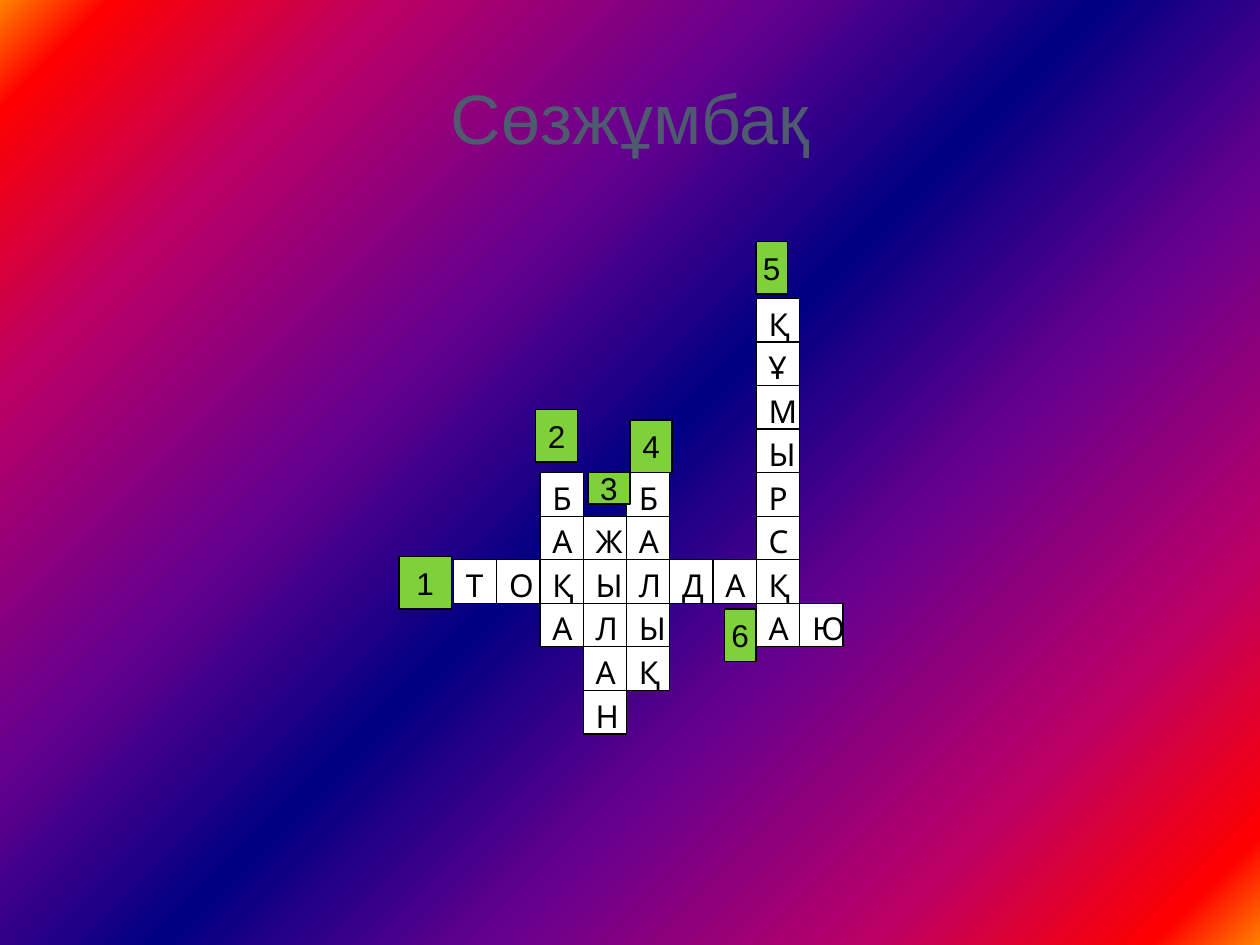
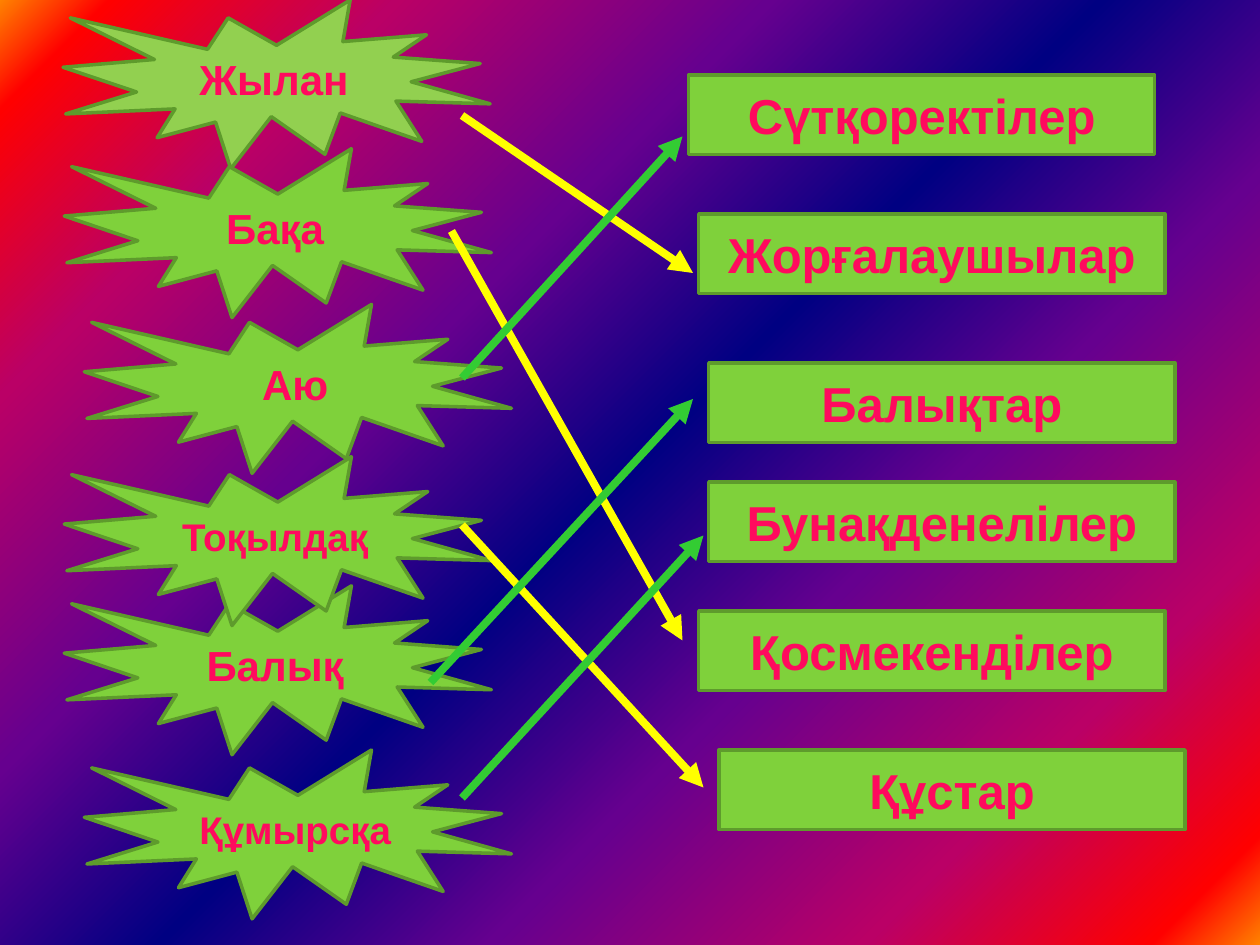
"""Build two slides about animals: a crossword and a matching exercise."""
from dataclasses import dataclass

from lxml.etree import SubElement
from pptx import Presentation
from pptx.dml.color import RGBColor
from pptx.enum.shapes import MSO_CONNECTOR, MSO_SHAPE
from pptx.enum.text import MSO_ANCHOR, PP_ALIGN
from pptx.oxml.ns import qn
from pptx.util import Pt


@dataclass(frozen=True)
class Theme:
    """Colours, fonts and type sizes of the presentation."""

    font: str = "Arial"
    cell_font: str = "Cabin"
    title: str = "4E5B6F"
    black: str = "000000"
    white: str = "FFFFFF"
    green: str = "7FD13B"
    light_green: str = "92D050"
    dark_green: str = "5E9B2C"
    yellow: str = "FFFF00"
    arrow_green: str = "33CC33"
    title_size: int = 40
    group_size: int = 28
    animal_size: int = 24
    long_animal_size: int = 22
    cell_size: int = 18
    thin: float = 0.75
    outline: float = 2
    arrow: float = 4.5
    rainbow: tuple = (
        (0, "FF8200"), (5, "FF0000"), (18, "BA0066"), (35, "66008F"), (50, "000082"),
        (65, "66008F"), (82, "BA0066"), (95, "FF0000"), (100, "FF8200"),
    )
    pink: tuple = ((0, "FF89AA"), (75, "FF0A5E"), (100, "BD0059"))


THEME = Theme()
CENTERED = {"vertical_anchor": MSO_ANCHOR.MIDDLE, "word_wrap": True}
UNWRAPPED = {"vertical_anchor": MSO_ANCHOR.MIDDLE, "word_wrap": False}
TOP = {"vertical_anchor": MSO_ANCHOR.TOP, "word_wrap": True}

TITLE_ONLY, BLANK = 5, 6
GRID_LEFT, GRID_TOP = 259.2, 170.6
CELL_WIDTH, CELL_HEIGHT = 24.72, 24.88
WORDS = [
    ("ТОҚЫЛДАҚ", 0, 6, "across"),
    ("БАҚА", 2, 4, "down"),
    ("ЖЫЛАН", 3, 5, "down"),
    ("БАЛЫҚ", 4, 4, "down"),
    ("ҚҰМЫРСҚА", 7, 0, "down"),
    ("АЮ", 7, 7, "across"),
]
NUMBERS = [
    ("1", 228, 318, 30, 30),
    ("2", 306, 234, 24, 30),
    ("4", 360, 240, 24, 30),
    ("3", 336, 270, 24, 18),
    ("5", 432, 138, 18, 30),
    ("6", 414, 348, 18, 30),
]
GROUPS = [
    ("Сүтқоректілер", 393.5, 43),
    ("Жорғалаушылар", 399.3, 122.3),
    ("Балықтар", 405, 207.4),
    ("Бунақденелілер", 405, 275.5),
    ("Қосмекенділер", 399.3, 349.2),
    ("Құстар", 410.8, 428.6),
]
ANIMALS = [
    ("Балық", 36.7, 334.8, THEME.green, THEME.animal_size),
    ("Жылан", 36, 0, THEME.light_green, THEME.animal_size),
    ("Бақа", 36.7, 85, THEME.green, THEME.animal_size),
    ("Аю", 48.2, 174, THEME.green, THEME.animal_size),
    ("Тоқылдақ", 36.7, 261, THEME.green, THEME.long_animal_size),
    ("Құмырсқа", 48.2, 428.6, THEME.green, THEME.long_animal_size),
]
ARROWS = [
    (264, 66, 396, 156, THEME.yellow),
    (258, 132, 390, 366, THEME.yellow),
    (264, 216, 390, 78, THEME.arrow_green),
    (264, 300, 402, 450, THEME.yellow),
    (246, 390, 396, 228, THEME.arrow_green),
    (264, 456, 402, 306, THEME.arrow_green),
]


def apply_format(target, values):
    """Set each named value on the target."""
    for name, value in values.items():
        setattr(target, name, value)


def set_gradient(fill, element, stops, angle):
    """Give a fill a linear gradient with the listed stops."""
    fill.gradient()
    fill.gradient_angle = angle
    stop_list = next(element.iter(qn("a:gsLst")))
    stop_list.clear()
    for position, color in stops:
        stop = SubElement(stop_list, qn("a:gs"), pos=str(position * 1000))
        SubElement(stop, qn("a:srgbClr"), val=color)


class SlideBuilder:
    """Hold the theme and the current slide, and draw elements on it."""

    def __init__(self, presentation, theme):
        """Keep the presentation and its theme."""
        self.presentation = presentation
        self.theme = theme
        self.slide = None

    def start_slide(self, layout_index):
        """Add a slide with the shared rainbow background."""
        layout = self.presentation.slide_layouts[layout_index]
        self.slide = self.presentation.slides.add_slide(layout)
        set_gradient(self.slide.background.fill, self.slide.element, self.theme.rainbow, 315)

    def label(self, shape, text, size, color, frame, font=None, align=PP_ALIGN.CENTER, bold=False):
        """Put one line of text in a shape, in a plain colour or a gradient."""
        apply_format(shape.text_frame, frame)
        paragraph = shape.text_frame.paragraphs[0]
        paragraph.alignment = align
        run = paragraph.add_run()
        run.text = text
        apply_format(run.font, {"name": font or self.theme.font, "size": Pt(size), "bold": bold})
        if isinstance(color, tuple):
            set_gradient(run.font.fill, shape.element, color, 270)
        else:
            run.font.color.rgb = RGBColor.from_string(color)

    def title(self, text):
        """Place and fill the title placeholder."""
        shape = self.slide.shapes.title
        apply_format(shape, {"left": Pt(36), "top": Pt(21.6), "width": Pt(648), "height": Pt(90)})
        self.label(shape, text, self.theme.title_size, self.theme.title, CENTERED)

    def box(self, kind, left, top, width, height, fill, line, line_width):
        """Add a filled and outlined shape."""
        lengths = map(Pt, (left, top, width, height))
        shape = self.slide.shapes.add_shape(kind, *lengths)
        shape.shadow.inherit = False
        shape.fill.solid()
        shape.fill.fore_color.rgb = RGBColor.from_string(fill)
        shape.line.color.rgb = RGBColor.from_string(line)
        shape.line.width = Pt(line_width)
        return shape

    def letter(self, text, column, row):
        """Add one crossword cell."""
        theme = self.theme
        shape = self.box(MSO_SHAPE.RECTANGLE, GRID_LEFT + column * CELL_WIDTH, GRID_TOP + row * CELL_HEIGHT,
                         CELL_WIDTH, CELL_HEIGHT, theme.white, theme.black, theme.thin)
        self.label(shape, text, theme.cell_size, theme.black, TOP, theme.cell_font, PP_ALIGN.LEFT)

    def number(self, text, left, top, width, height):
        """Add the number of a crossword word."""
        theme = self.theme
        shape = self.box(MSO_SHAPE.RECTANGLE, left, top, width, height, theme.green, theme.black, theme.thin)
        self.label(shape, text, theme.cell_size, theme.black, UNWRAPPED)

    def group(self, text, left, top):
        """Add the name of an animal group."""
        theme = self.theme
        shape = self.box(MSO_SHAPE.RECTANGLE, left, top, 266.4, 45.4,
                         theme.green, theme.dark_green, theme.outline)
        self.label(shape, text, theme.group_size, theme.pink, CENTERED, bold=True)

    def animal(self, text, left, top, fill, size):
        """Add an animal name in a burst."""
        theme = self.theme
        shape = self.box(MSO_SHAPE.EXPLOSION1, left, top, 244.1, 96.5,
                         fill, theme.dark_green, theme.outline)
        self.label(shape, text, size, theme.pink, CENTERED, bold=True)

    def arrow(self, start_x, start_y, end_x, end_y, color):
        """Add an arrow from an animal to its group."""
        lengths = map(Pt, (start_x, start_y, end_x, end_y))
        connector = self.slide.shapes.add_connector(MSO_CONNECTOR.STRAIGHT, *lengths)
        connector.line.color.rgb = RGBColor.from_string(color)
        connector.line.width = Pt(self.theme.arrow)
        SubElement(connector.get_or_add_ln(), qn("a:tailEnd"), type="triangle")
        SubElement(connector.element.spPr, qn("a:effectLst"))


def crossword_cells():
    """Map each grid position to its letter, shared crossings once."""
    cells = {}
    for word, column, row, direction in WORDS:
        for step, letter in enumerate(word):
            position = (column + step, row) if direction == "across" else (column, row + step)
            cells[position] = letter
    return cells


def main():
    """Build and save the presentation."""
    presentation = Presentation()
    apply_format(presentation, {"slide_width": Pt(720), "slide_height": Pt(540)})
    builder = SlideBuilder(presentation, THEME)

    builder.start_slide(TITLE_ONLY)
    builder.title("Сөзжұмбақ")
    for (column, row), letter in crossword_cells().items():
        builder.letter(letter, column, row)
    for number in NUMBERS:
        builder.number(*number)

    builder.start_slide(BLANK)
    for group in GROUPS:
        builder.group(*group)
    for animal in ANIMALS:
        builder.animal(*animal)
    for arrow in ARROWS:
        builder.arrow(*arrow)

    presentation.save("out.pptx")


if __name__ == "__main__":
    main()
